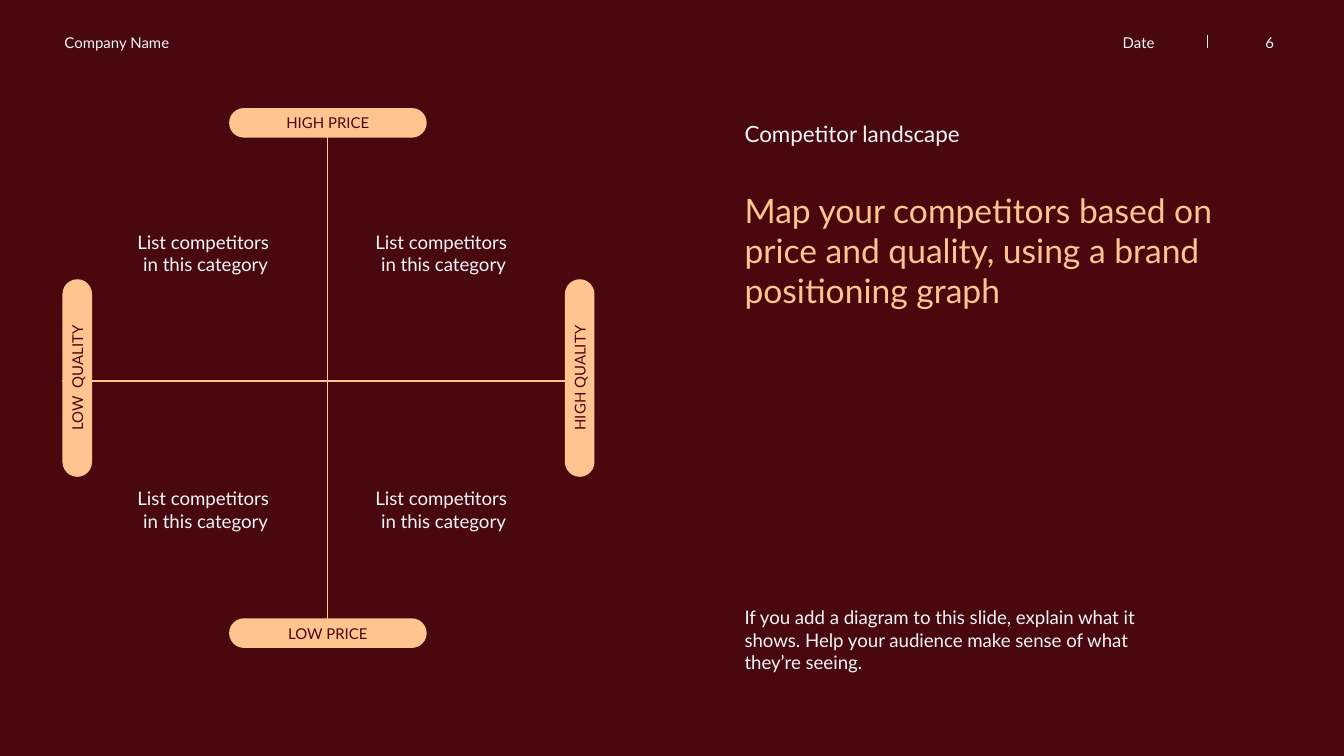
from lxml.etree import SubElement
from pptx import Presentation
from pptx.dml.color import RGBColor
from pptx.enum.shapes import MSO_CONNECTOR as Connector, MSO_SHAPE as Shape
from pptx.enum.text import MSO_ANCHOR as Anchor, PP_ALIGN as Align
from pptx.oxml.ns import qn
from pptx.util import Inches, Pt

WINE, PEACH, MIST = "49070E", "FFC490", "F1F5F8"

presentation = Presentation()
presentation.slide_width = Inches(10)
presentation.slide_height = presentation.slide_width * 9 // 16
slide = presentation.slides.add_slide(presentation.slide_layouts[6])

# All positions are percentages of the slide's width and height.
COLUMN = presentation.slide_width / 100
ROW = presentation.slide_height / 100


def paint(color_format, color):
    color_format.rgb = RGBColor.from_string(color)


def write(shape, text, size, color, align=Align.LEFT, anchor=Anchor.TOP):
    """Fill a shape with one wrapped paragraph and no insets."""
    frame = shape.text_frame
    frame.word_wrap = True
    frame.vertical_anchor = anchor
    frame.margin_left = frame.margin_right = frame.margin_top = frame.margin_bottom = 0
    paragraph = frame.paragraphs[0]
    paragraph.text = text
    paragraph.alignment = align
    paragraph.font.name = "Lato"
    paragraph.font.size = Pt(size)
    paint(paragraph.font.color, color)


slide.background.fill.solid()
paint(slide.background.fill.fore_color, WINE)

# Header and right-hand column
texts = [
    ("Company Name", 4.8, 4.45, 20.7, 4.45, 8, MIST, Align.LEFT),
    ("Date", 74.4, 4.45, 11.5, 2.85, 8, MIST, Align.RIGHT),
    ("6", 90.6, 4.45, 4.2, 4.45, 8, MIST, Align.RIGHT),
    ("Competitor landscape", 55.4, 15.87, 29.7, 4.8, 12, MIST, Align.LEFT),
    ("Map your competitors based on price and quality, using a brand positioning graph",
     55.4, 25.07, 38.8, 16.19, 18, PEACH, Align.LEFT),
    ("If you add a diagram to this slide, explain what it shows. "
     "Help your audience make sense of what they’re seeing.",
     55.4, 80.2, 29.7, 4.8, 10, MIST, Align.LEFT),
]
for text, left, top, width, height, size, color, align in texts:
    box = slide.shapes.add_textbox(
        int(left * COLUMN), int(top * ROW), int(width * COLUMN), int(height * ROW))
    write(box, text, size, color, align)

# Quadrant notes
for left in (8.3, 26):
    for top in (26.17, 60.13):
        note = slide.shapes.add_textbox(
            int(left * COLUMN), int(top * ROW), int(14 * COLUMN), int(14.58 * ROW))
        write(note, "List competitors \vin this category", 10, MIST,
              Align.CENTER, Anchor.MIDDLE)

# Header divider, price axis and quality axis
lines = [
    (89.85, 4.6, 89.85, 6.4, MIST),
    (24.37, 14.3, 24.37, 85.7, PEACH),
    (4.6, 50.4, 44.2, 50.4, PEACH),
]
for x1, y1, x2, y2, color in lines:
    line = slide.shapes.add_connector(
        Connector.STRAIGHT, int(x1 * COLUMN), int(y1 * ROW), int(x2 * COLUMN), int(y2 * ROW))
    line.line.width = Pt(0.75)
    paint(line.line.color, color)
    SubElement(line._element.spPr, qn("a:effectLst"))

# Axis labels, each placed by its centre
PILL_WIDTH, PILL_HEIGHT = Inches(1.47), Inches(0.22)
labels = [
    ("HIGH PRICE", 24.4, 16.25, 0),
    ("LOW PRICE", 24.4, 83.75, 0),
    ("LOW  QUALITY", 5.75, 50, 270),
    ("HIGH QUALITY", 43.13, 50, 270),
]
for text, center_x, center_y, rotation in labels:
    pill = slide.shapes.add_shape(
        Shape.ROUNDED_RECTANGLE,
        int(center_x * COLUMN - PILL_WIDTH / 2), int(center_y * ROW - PILL_HEIGHT / 2),
        PILL_WIDTH, PILL_HEIGHT)
    pill.adjustments[0] = 0.5
    pill.rotation = rotation
    pill.shadow.inherit = False
    pill.fill.solid()
    paint(pill.fill.fore_color, PEACH)
    pill.line.fill.background()
    write(pill, text, 8, WINE, Align.CENTER, Anchor.MIDDLE)

presentation.save("out.pptx")
